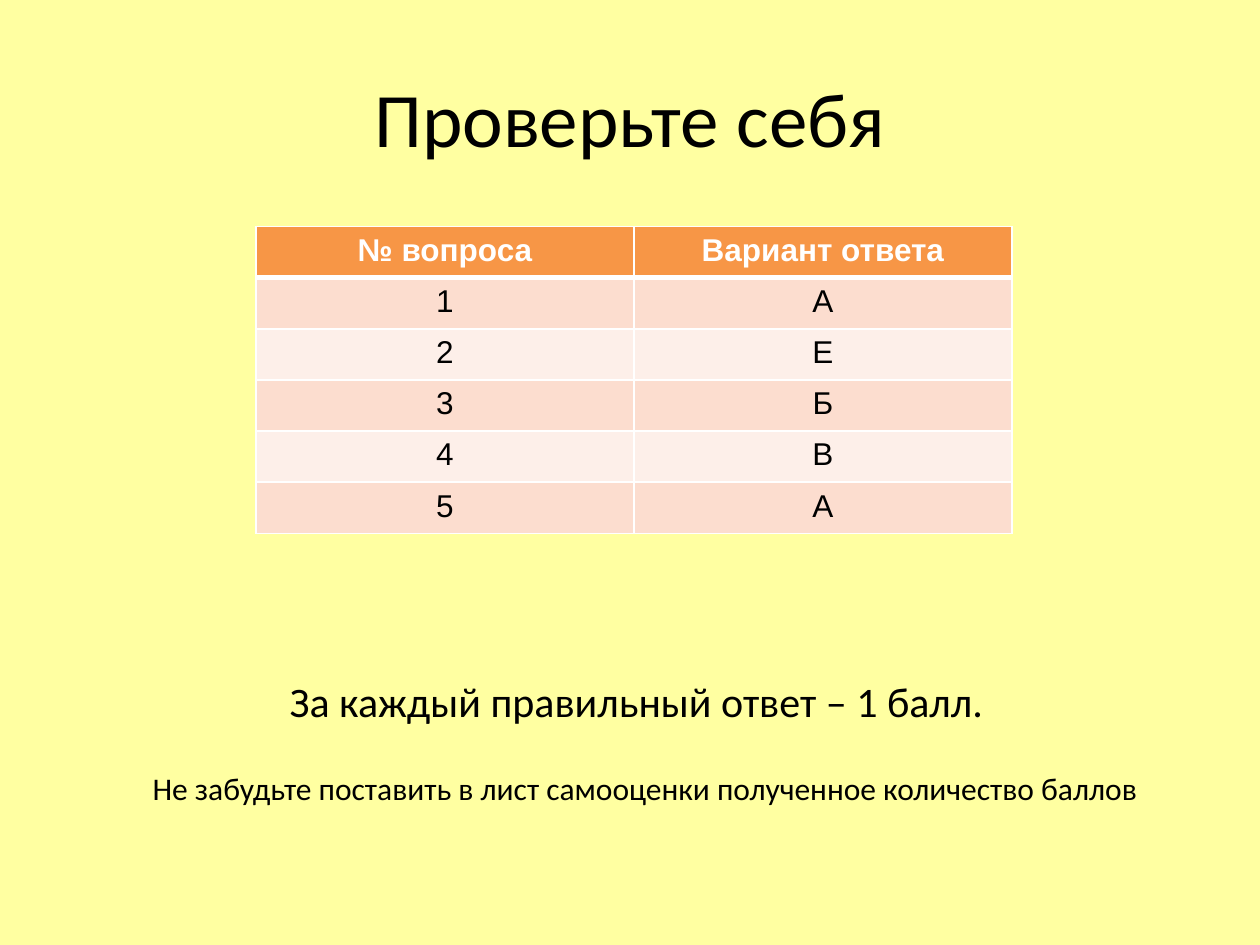
"""Build the self-check slide with its answer table."""
from lxml import etree
from pptx import Presentation
from pptx.dml.color import RGBColor
from pptx.enum import text
from pptx.oxml import ns
from pptx import util as u

TITLE = "Проверьте себя"
ROWS = [
    ("№ вопроса", "Вариант ответа"),
    ("1", "А"),
    ("2", "Е"),
    ("3", "Б"),
    ("4", "В"),
    ("5", "А"),
]
NOTES = [
    "За каждый правильный ответ – 1 балл.",
    "Не забудьте поставить в лист самооценки полученное количество баллов",
]
THEME = {
    "back": "FFFFA1", "ink": "000000", "light": "FFFFFF", "head": "F79646",
    "bands": ("FDEFE9", "FCDDCF"), "body": "Calibri", "grid": "Arial",
    "title": 44, "cell": 18, "notes": (24, 18), "thin": 1, "thick": 3,
}
COL, ROW = 7.62, 1.03


def style(para, size, face, ink, bold=False):
    para.alignment = text.PP_ALIGN.CENTER
    font = para.font
    font.size, font.name, font.bold = u.Pt(size), face, bold
    font.color.rgb = RGBColor.from_string(ink)


def add_text(slide, spot, lines, sizes, anchor):
    frame = slide.shapes.add_textbox(*map(u.Cm, spot)).text_frame
    frame.word_wrap = True
    frame.vertical_anchor = anchor
    frame.text = "\n".join(lines)
    for para, size in zip(frame.paragraphs, sizes):
        style(para, size, THEME["body"], THEME["ink"])
    return frame


def edge(cell, side, width):
    props = cell._tc.get_or_add_tcPr()
    line = etree.SubElement(props, ns.qn("a:ln" + side), w=str(u.Pt(width)))
    fill = etree.SubElement(line, ns.qn("a:solidFill"))
    etree.SubElement(fill, ns.qn("a:srgbClr"), val=THEME["light"])


def add_grid(slide):
    size = (COL * len(ROWS[0]), ROW * len(ROWS))
    table = slide.shapes.add_table(
        len(ROWS), len(ROWS[0]), *map(u.Cm, (5.16, 4.57, *size))).table
    for r, row in enumerate(ROWS):
        head = r == 0
        heavy = {0: "B", 1: "T"}.get(r)
        fill = THEME["head"] if head else THEME["bands"][r % 2]
        ink = THEME["light" if head else "ink"]
        for c, word in enumerate(row):
            cell = table.cell(r, c)
            cell.text = word
            style(cell.text_frame.paragraphs[0], THEME["cell"], THEME["grid"], ink, head)
            for side in "LRTB":
                edge(cell, side, THEME["thick" if side == heavy else "thin"])
            cell.fill.solid()
            cell.fill.fore_color.rgb = RGBColor.from_string(fill)


def main():
    deck = Presentation()
    deck.slide_width, deck.slide_height = u.Cm(25.4), u.Cm(19.05)
    slide = deck.slides.add_slide(deck.slide_layouts[6])
    back = slide.background.fill
    back.solid()
    back.fore_color.rgb = RGBColor.from_string(THEME["back"])
    add_text(slide, (1.27, 0.76, 22.86, 3.18), [TITLE], [THEME["title"]],
             text.MSO_ANCHOR.MIDDLE)
    add_grid(slide)
    notes = add_text(slide, (1.4, 13.49, 22.86, 3.18), NOTES, THEME["notes"],
                     text.MSO_ANCHOR.TOP)
    last = notes.paragraphs[-1]
    last.space_before = u.Pt(25)
    last._p.get_or_add_pPr().set("marL", str(u.Cm(0.35)))
    deck.save("out.pptx")


if __name__ == "__main__":
    main()
